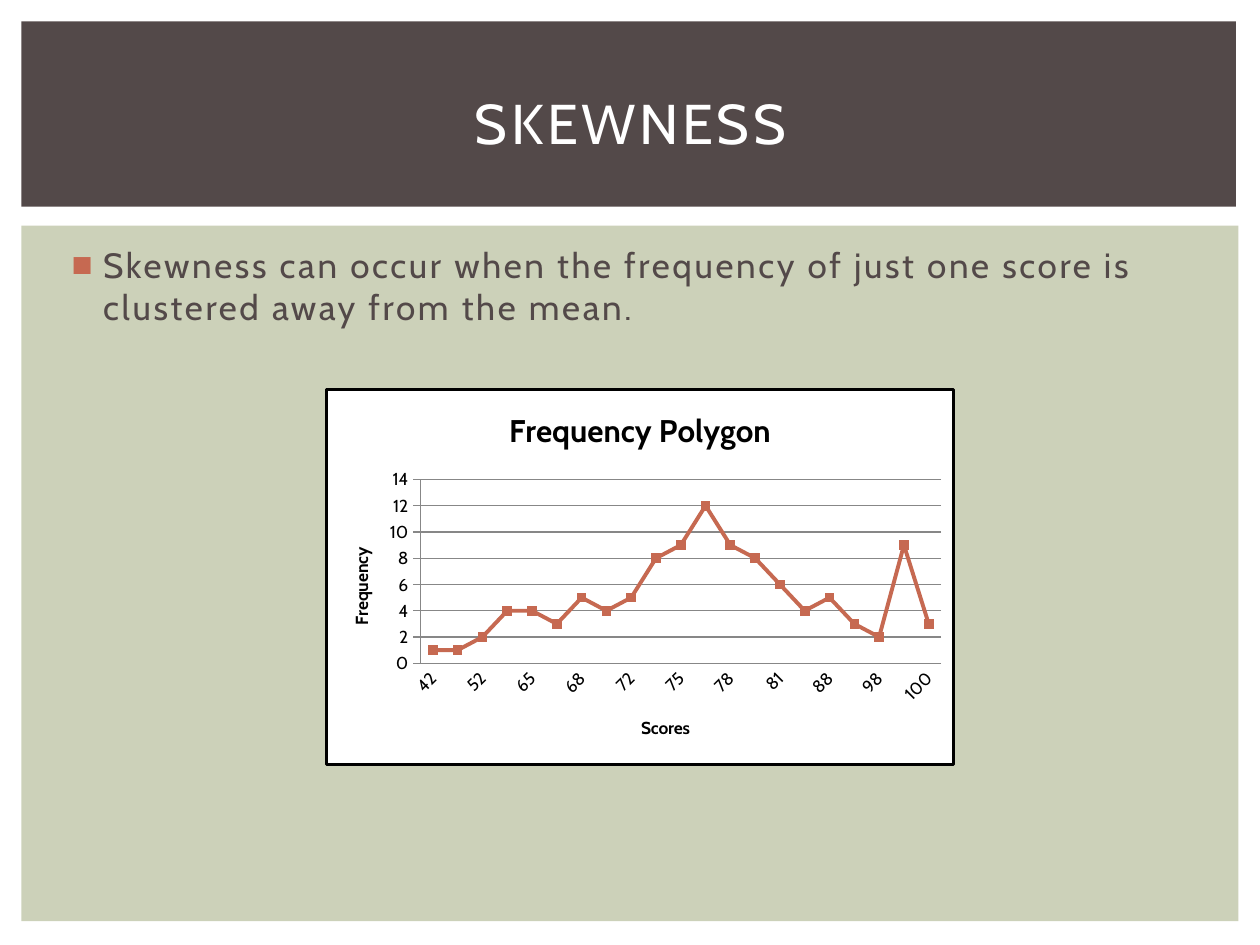
import pptx
import pptx.util
import pptx.chart.data
import pptx.dml.color
import pptx.enum.chart
import pptx.enum.shapes
import pptx.enum.text
import pptx.oxml
import pptx.oxml.ns
from pptx.util import Inches

RGBColor = pptx.dml.color.RGBColor
WHITE = RGBColor(0xFF, 0xFF, 0xFF)
BLACK = RGBColor(0, 0, 0)
GRAY = RGBColor(0x87, 0x87, 0x87)
BROWN = RGBColor(0x53, 0x49, 0x49)
SAGE = RGBColor(0xCC, 0xD1, 0xB9)
RUST = RGBColor(0xC6, 0x69, 0x51)

SCORES = [42, 43, 52, 60, 65, 67, 68, 70, 72, 73, 75, 77, 78, 79, 81, 85, 88, 91, 98, 99, 100]
FREQUENCIES = [1, 1, 2, 4, 4, 3, 5, 4, 5, 8, 9, 12, 9, 8, 6, 4, 5, 3, 2, 9, 3]


def xml(markup):
    """Parse one element, declaring the drawing and chart namespaces."""
    start, rest = markup.split(" ", 1)
    return pptx.oxml.parse_xml(f"{start} {pptx.oxml.ns.nsdecls('a', 'c')} {rest}")


class SlideBuilder:
    font = "Cabin"

    def __init__(self, slide):
        self.slide = slide

    def panel(self, left, top, width, height, color):
        shape = self.slide.shapes.add_shape(
            pptx.enum.shapes.MSO_SHAPE.RECTANGLE,
            Inches(left), Inches(top), Inches(width), Inches(height))
        shape.shadow.inherit = False
        shape.fill.solid()
        shape.fill.fore_color.rgb = color
        shape.line.fill.background()

    def text(self, left, top, width, height, words, size, color, spacing):
        box = self.slide.shapes.add_textbox(
            Inches(left), Inches(top), Inches(width), Inches(height))
        box.text_frame.word_wrap = True
        paragraph = box.text_frame.paragraphs[0]
        run = paragraph.add_run()
        run.text = words
        self.style(run.font, size, color)
        run.font._element.set("spc", str(round(spacing * 100)))
        return box.text_frame

    def bullet(self, paragraph, color):
        properties = paragraph._p.get_or_add_pPr()
        properties.set("marL", str(Inches(0.3)))
        properties.set("indent", str(Inches(-0.25)))
        properties.append(xml(f'<a:buClr ><a:srgbClr val="{color}"/></a:buClr>'))
        properties.append(xml('<a:buFont typeface="Arial"/>'))
        properties.append(xml('<a:buChar char="■"/>'))

    def style(self, font, size, color, bold=False):
        font.name, font.size, font.bold = self.font, pptx.util.Pt(size), bold
        font.color.rgb = color

    def chart_title(self, owner, words, size):
        owner.has_title = True
        title = owner.chart_title if hasattr(owner, "chart_title") else owner.axis_title
        run = title.text_frame.paragraphs[0].add_run()
        run.text = words
        self.style(run.font, size, BLACK, bold=True)

    def line_chart(self, left, top, width, height, categories, values):
        data = pptx.chart.data.CategoryChartData()
        data.categories = [str(category) for category in categories]
        data.add_series("Series 1", values)
        chart = self.slide.shapes.add_chart(
            pptx.enum.chart.XL_CHART_TYPE.LINE_MARKERS, Inches(left), Inches(top),
            Inches(width), Inches(height), data).chart
        chart.has_legend = False
        self.style(chart.font, 10, BLACK)
        self.chart_title(chart, "Frequency Polygon", 18)

        # Series
        series = chart.plots[0].series[0]
        chart.plots[0].vary_by_categories = False
        series.smooth = False
        series.format.line.color.rgb = RUST
        series.format.line.width = pptx.util.Pt(2.25)
        series.marker.style = pptx.enum.chart.XL_MARKER_STYLE.SQUARE
        series.marker.size = 5
        series.marker.format.fill.solid()
        series.marker.format.fill.fore_color.rgb = RUST
        series.marker.format.line.color.rgb = RUST

        # Axes
        ticks = pptx.enum.chart.XL_TICK_MARK
        category_axis, value_axis = chart.category_axis, chart.value_axis
        for axis, words, tick in ((category_axis, "Scores", ticks.NONE),
                                  (value_axis, "Frequency", ticks.OUTSIDE)):
            self.chart_title(axis, words, 10)
            self.style(axis.tick_labels.font, 10, BLACK)
            axis.major_tick_mark = tick
            axis.minor_tick_mark = ticks.NONE
            axis.format.line.color.rgb = GRAY
        value_axis.axis_title.text_frame._txBody.bodyPr.set("rot", "-5400000")
        value_axis.minimum_scale, value_axis.maximum_scale = 0, 14
        value_axis.major_unit = 2
        value_axis.major_gridlines.format.line.color.rgb = GRAY
        category_element = category_axis._element
        category_element.find(pptx.oxml.ns.qn("c:txPr")).bodyPr.set("rot", "-2700000")
        category_element.find(pptx.oxml.ns.qn("c:noMultiLvlLbl")).addprevious(
            xml('<c:tickLblSkip val="2"/>'))

        # Plot position and chart frame
        plot_area = chart._chartSpace.chart.plotArea
        for old_layout in plot_area.findall(pptx.oxml.ns.qn("c:layout")):
            plot_area.remove(old_layout)
        plot_area.insert(0, xml(
            '<c:layout ><c:manualLayout><c:layoutTarget val="inner"/>'
            '<c:xMode val="edge"/><c:yMode val="edge"/><c:x val="0.15"/><c:y val="0.24"/>'
            '<c:w val="0.83"/><c:h val="0.49"/></c:manualLayout></c:layout>'))
        chart._chartSpace.chart.addnext(xml(
            f'<c:spPr ><a:solidFill><a:srgbClr val="{WHITE}"/></a:solidFill>'
            f'<a:ln w="{pptx.util.Pt(1.5)}"><a:solidFill><a:srgbClr val="{BLACK}"/>'
            '</a:solidFill></a:ln></c:spPr>'))


def main():
    presentation = pptx.Presentation()
    presentation.slide_width, presentation.slide_height = Inches(10), Inches(7.5)
    builder = SlideBuilder(presentation.slides.add_slide(presentation.slide_layouts[6]))

    # Background panels
    builder.panel(0.17, 1.79, 9.66, 5.52, SAGE)
    builder.panel(0.17, 0.17, 9.64, 1.47, BROWN)

    # Body
    body = builder.text(
        0.42, 1.88, 9.19, 1.2,
        "Skewness can occur when the frequency of just one score is clustered away from the mean.",
        20, BROWN, 1.5)
    body.paragraphs[0].space_before = pptx.util.Pt(4)
    builder.bullet(body.paragraphs[0], RUST)

    # Title
    title = builder.text(0.42, 0.39, 9.17, 1.15, "SKEWNESS", 32, WHITE, 2)
    title.vertical_anchor = pptx.enum.text.MSO_ANCHOR.MIDDLE
    title.paragraphs[0].alignment = pptx.enum.text.PP_ALIGN.CENTER

    # Frequency chart
    builder.line_chart(2.58, 3.08, 5, 3, SCORES, FREQUENCIES)

    presentation.save("out.pptx")


if __name__ == "__main__":
    main()
